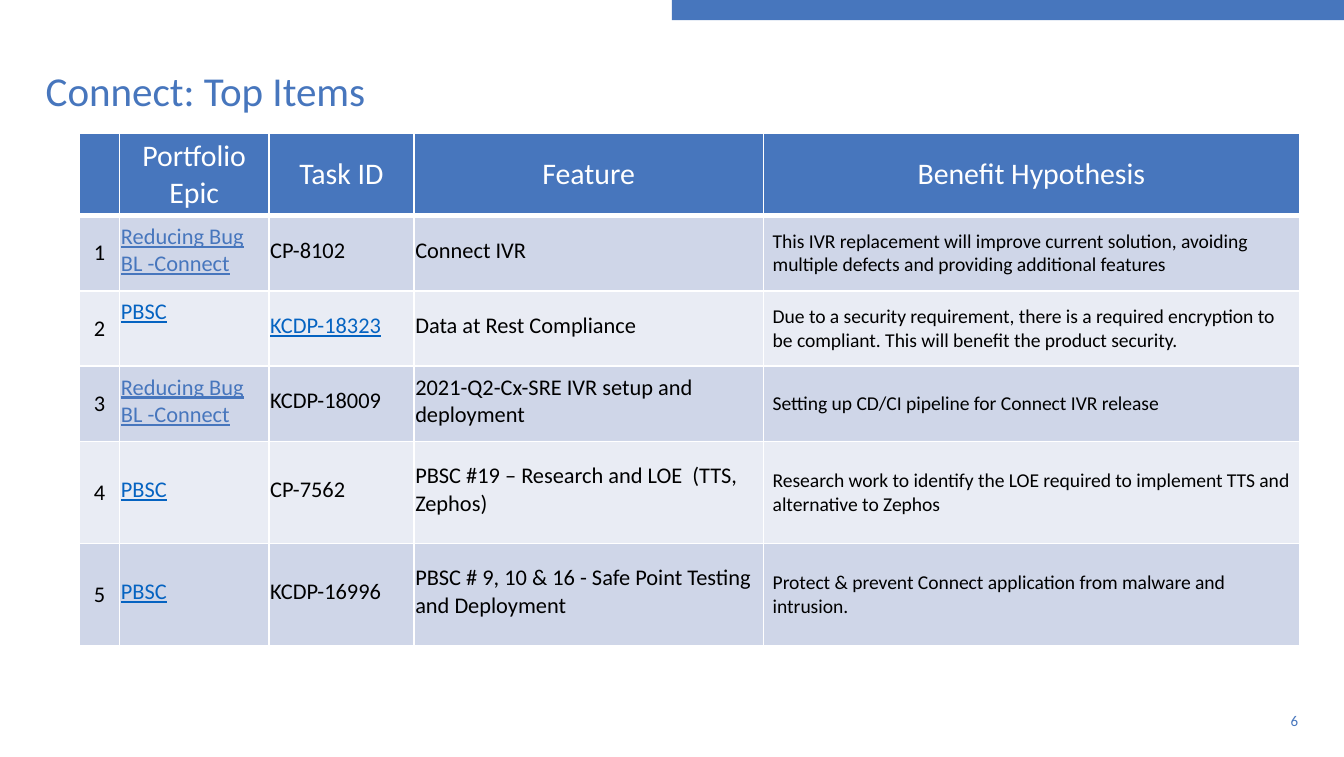
import pptx
import pptx.dml.color
import pptx.enum.shapes
import pptx.enum.text
import pptx.oxml.ns
import pptx.util
from lxml import etree

ALIGN = pptx.enum.text.PP_ALIGN
ANCHOR = pptx.enum.text.MSO_ANCHOR

BLUE, LINK, BLACK, WHITE = "4776BD", "0563C1", "000000", "FFFFFF"
BANDS = ("CFD6E8", "E9ECF4")

# Cell margins in grid units: left, top, right, bottom
ROOMY = (0.7, 0.4, 0.7, 0.4)
TIGHT = (0.1, 0.1, 0.1, 0.5)
RAISED = (0.1, 0.1, 0.1, 2.5)

HEADINGS = ("", "Portfolio Epic", "Task ID", "Feature", "Benefit Hypothesis")
COLUMN_WIDTHS = (3, 11.1, 10.8, 26, 39.9)
ROW_HEIGHTS = (5.9, 5.6, 5.6, 5.6, 7.6, 7.6)
BUG_EPIC = "Reducing Bug BL -Connect"
ITEMS = (
    (BUG_EPIC, "CP-8102", "Connect IVR",
     "This IVR replacement will improve current solution, avoiding multiple "
     "defects and providing additional features"),
    ("PBSC", "KCDP-18323", "Data at Rest Compliance",
     "Due to a security requirement, there is a required encryption to be "
     "compliant. This will benefit the product security."),
    (BUG_EPIC, "KCDP-18009", "2021-Q2-Cx-SRE IVR setup and deployment",
     "Setting up CD/CI pipeline for Connect IVR release"),
    ("PBSC", "CP-7562", "PBSC #19 – Research and LOE  (TTS, Zephos)",
     "Research work to identify the LOE required to implement TTS and "
     "alternative to Zephos"),
    ("PBSC", "KCDP-16996", "PBSC # 9, 10 & 16 - Safe Point Testing and Deployment",
     "Protect & prevent Connect application from malware and intrusion."),
)
LINKED_ID = "KCDP-18323"


def color(hex_code):
    return pptx.dml.color.RGBColor.from_string(hex_code)


def grid(units):
    """Length of grid units; the slide is 100 columns by 56.3 rows."""
    return pptx.util.Inches(units / 10)


class SlideBuilder:
    font_name = "Calibri"

    def __init__(self, slide):
        self.slide = slide

    def style(self, para, size, hex_code, align=ALIGN.LEFT, underline=False):
        para.alignment = align
        para.font.name = self.font_name
        para.font.size = pptx.util.Pt(size)
        para.font.color.rgb = color(hex_code)
        para.font.underline = underline

    def bar(self, *place):
        bar = self.slide.shapes.add_shape(
            pptx.enum.shapes.MSO_SHAPE.RECTANGLE, *map(grid, place))
        bar.shadow.inherit = False
        bar.fill.solid()
        bar.fill.fore_color.rgb = color(BLUE)
        bar.line.fill.background()

    def text(self, words, place, size, anchor, align=ALIGN.LEFT, wrap=True):
        frame = self.slide.shapes.add_textbox(*map(grid, place)).text_frame
        frame.margin_left = frame.margin_top = 0
        frame.margin_right = frame.margin_bottom = 0
        frame.word_wrap = wrap
        frame.vertical_anchor = anchor
        para = frame.paragraphs[0]
        para.text = words
        para.line_spacing = 0.9
        self.style(para, size, BLUE, align)

    def table(self, left, top, widths, heights):
        table = self.slide.shapes.add_table(
            len(heights), len(widths), grid(left), grid(top),
            grid(sum(widths)), grid(sum(heights))).table
        for column, width in zip(table.columns, widths):
            column.width = grid(width)
        for row, height in zip(table.rows, heights):
            row.height = grid(height)
        return table

    def cell(self, cell, words, fill, size, hex_code=BLACK, align=ALIGN.LEFT,
             underline=False, margins=ROOMY, top=1, bottom=1):
        for side, width in (("L", 1), ("R", 1), ("T", top), ("B", bottom)):
            self.border(cell, side, width)
        cell.fill.solid()
        cell.fill.fore_color.rgb = color(fill)
        (cell.margin_left, cell.margin_top,
         cell.margin_right, cell.margin_bottom) = map(grid, margins)
        cell.vertical_anchor = ANCHOR.MIDDLE
        para = cell.text_frame.paragraphs[0]
        para.text = words
        self.style(para, size, hex_code, align, underline)

    def border(self, cell, side, width):
        qn = pptx.oxml.ns.qn
        line = etree.SubElement(cell._tc.get_or_add_tcPr(), qn("a:ln" + side),
                                w=str(pptx.util.Pt(width)))
        fill = etree.SubElement(line, qn("a:solidFill"))
        etree.SubElement(fill, qn("a:srgbClr"), val=WHITE)


def main():
    deck = pptx.Presentation()
    deck.slide_width, deck.slide_height = grid(100), grid(56.3)
    page = SlideBuilder(deck.slides.add_slide(deck.slide_layouts[6]))

    # Page number, top bar and title
    page.text("6", (86.6, 52.2, 10, 3), 8, ANCHOR.MIDDLE, ALIGN.RIGHT, wrap=False)
    page.bar(50, 0, 50, 1.5)
    page.text("Connect: Top Items", (3.4, 2.3, 93.2, 6.3), 22, ANCHOR.BOTTOM)

    # Table header
    table = page.table(5.9, 9.9, COLUMN_WIDTHS, ROW_HEIGHTS)
    for index, heading in enumerate(HEADINGS):
        page.cell(table.cell(0, index), heading, BLUE, 16, WHITE, ALIGN.CENTER,
                  bottom=3)

    # Numbered items on alternating bands
    for number, (epic, task, feature, benefit) in enumerate(ITEMS, start=1):
        cells = table.rows[number].cells
        band = {"fill": BANDS[(number - 1) % 2], "top": 3 if number == 1 else 1}
        epic_color = BLUE if epic == BUG_EPIC else LINK
        linked = task == LINKED_ID
        page.cell(cells[0], str(number), size=12, align=ALIGN.CENTER, **band)
        page.cell(cells[1], epic, size=12, hex_code=epic_color, underline=True,
                  margins=RAISED if linked else TIGHT, **band)
        page.cell(cells[2], task, size=12, hex_code=LINK if linked else BLACK,
                  underline=linked, margins=TIGHT, **band)
        page.cell(cells[3], feature, size=12, margins=TIGHT, **band)
        page.cell(cells[4], benefit, size=10.5, **band)

    deck.save("out.pptx")


if __name__ == "__main__":
    main()
